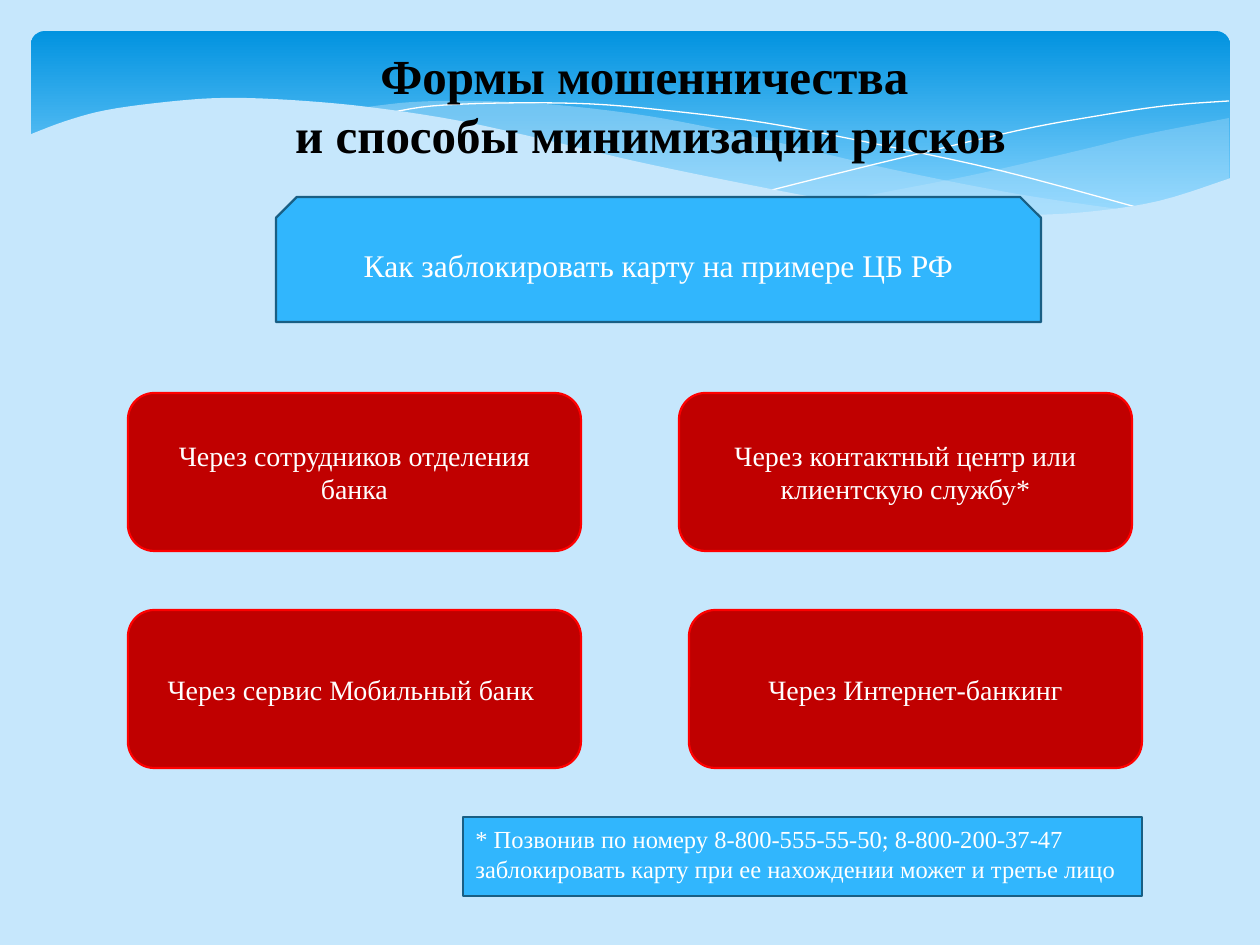
from dataclasses import dataclass

from lxml.etree import SubElement
from pptx import Presentation
from pptx.dml.color import RGBColor
from pptx.enum.shapes import MSO_SHAPE
from pptx.enum.text import MSO_ANCHOR, PP_ALIGN
from pptx.oxml.ns import qn
from pptx.util import Emu, Pt

PX = 914400 / 126  # EMU in one px


@dataclass(frozen=True)
class Theme:
    font: str = "Times New Roman"
    sky: str = "C6E7FC"
    band_top: str = "0293E0"
    band_bottom: str = "83D3FE"
    blue: str = "31B6FD"
    blue_edge: str = "195F84"
    red: str = "C00000"
    red_edge: str = "FF0000"
    white: str = "FFFFFF"
    black: str = "000000"
    title_size: int = 28
    banner_size: int = 18
    card_size: int = 16
    note_size: int = 14
    edge_width: float = 1.25


THEME = Theme()

# Content
TITLE = ["Формы мошенничества ", "и способы минимизации рисков"]
BANNER = "Как заблокировать карту на примере ЦБ РФ"
CARDS = [  # text, left, top
    ("Через сотрудников отделения банка", 128, 393),
    ("Через контактный центр или клиентскую службу*", 679, 393),
    ("Через сервис Мобильный банк ", 128, 610),
    ("Через Интернет-банкинг", 689, 610),
]
NOTE = [
    "* Позвонив по номеру 8-800-555-55-50; 8-800-200-37-47",
    "заблокировать карту при ее нахождении может и третье лицо",
]
CARD_WIDTH, CARD_HEIGHT = 453, 158

# Header waves: knots of smooth edges, from back to front
RIGHT_WAVE = [
    [(1229, 118), (1142, 135), (1085, 149), (982, 173), (891, 191), (833, 202)],
    [(833, 202), (906, 210), (998, 217), (1063, 215), (1130, 208), (1187, 197), (1229, 179)],
]
MIDDLE_WAVE = [
    [(360, 108), (413, 102), (479, 101), (557, 105), (648, 116), (736, 133),
     (793, 146), (890, 169), (1017, 194), (1125, 210)],
    [(1125, 210), (1068, 217), (1017, 218), (943, 215), (856, 206), (757, 189),
     (668, 170), (566, 146), (483, 127), (407, 113), (360, 108)],
]
FALLING_LINE = [
    [(389, 113), (432, 106), (505, 103), (591, 104), (671, 111), (766, 123),
     (876, 144), (1002, 171), (1143, 209)],
]
RISING_LINE = [[(772, 190), (876, 164), (1016, 131), (1091, 117), (1164, 106), (1229, 101)]]
FRONT_WAVE = [
    [(1231, 178), (1159, 201), (1087, 212), (1019, 215), (937, 212), (842, 202),
     (730, 181), (634, 161), (563, 144), (460, 121), (368, 107), (290, 100),
     (223, 98), (166, 102), (107, 110), (66, 121), (29, 135)],
    [(29, 282), (1231, 282)],
]
WAVES = [  # edges, opacity in percent (None for a bare line)
    (RIGHT_WAVE, 29),
    (MIDDLE_WAVE, 40),
    (FALLING_LINE, None),
    (RISING_LINE, None),
    (FRONT_WAVE, 100),
]


def px(value):
    return Emu(round(value * PX))


def color(code):
    return RGBColor.from_string(code)


def smooth_points(knots, steps=5):
    """Points of a Catmull-Rom curve through the knots."""
    if len(knots) == 2:
        return knots
    padded = [knots[0], *knots, knots[-1]]
    points = [knots[0]]
    for before, start, end, after in zip(padded, padded[1:], padded[2:], padded[3:]):
        for step in range(1, steps + 1):
            t = step / steps
            points.append(tuple(
                (2 * b + (c - a) * t + (2 * a - 5 * b + 4 * c - d) * t**2
                 + (3 * b - a - 3 * c + d) * t**3) / 2
                for a, b, c, d in zip(before, start, end, after)))
    return points


def add_wave(page, edges, opacity):
    points = [(px(x), px(y)) for knots in edges for x, y in smooth_points(knots)]
    builder = page.shapes.build_freeform(*points[0], scale=1.0)
    builder.add_line_segments(points[1:], close=opacity is not None)
    wave = builder.convert_to_shape()
    wave.shadow.inherit = False
    if opacity is None:
        wave.fill.background()
        wave.line.color.rgb = color(THEME.white)
        wave.line.width = Pt(0)
        return
    wave.fill.solid()
    wave.fill.fore_color.rgb = color(THEME.sky)
    if opacity < 100:
        sky = next(wave.element.iter(qn("a:srgbClr")))
        SubElement(sky, qn("a:alpha"), val=str(opacity * 1000))
    wave.line.fill.background()


def add_span(para, text, size, ink=THEME.white, bold=False):
    span = para.add_run()
    span.text = text
    span.font.name = THEME.font
    span.font.size = Pt(size)
    span.font.bold = bold
    span.font.color.rgb = color(ink)


def add_box(page, kind, place, fill, edge, lines, size, align=PP_ALIGN.CENTER):
    box = page.shapes.add_shape(kind, *map(px, place))
    box.shadow.inherit = False
    box.fill.solid()
    box.fill.fore_color.rgb = color(fill)
    box.line.color.rgb = color(edge)
    box.line.width = Pt(THEME.edge_width)
    frame = box.text_frame
    frame.word_wrap = True
    frame.vertical_anchor = MSO_ANCHOR.MIDDLE
    for index, line in enumerate(lines):
        para = frame.add_paragraph() if index else frame.paragraphs[0]
        para.alignment = align
        add_span(para, line, size)
    return box


def add_header(page):
    band = page.shapes.add_shape(MSO_SHAPE.ROUNDED_RECTANGLE, *map(px, (31, 31, 1199, 197)))
    band.adjustments[0] = 0.07
    band.shadow.inherit = False
    band.line.fill.background()
    band.fill.gradient()
    band.fill.gradient_angle = 270
    stops = [(0, THEME.band_top), (0.9, THEME.band_bottom)]
    for stop, (position, code) in zip(band.fill.gradient_stops, stops):
        stop.position = position
        stop.color.rgb = color(code)
    for edges, opacity in WAVES:
        add_wave(page, edges, opacity)


def place_title(page):
    title = page.shapes.title
    title.element.getparent().append(title.element)  # in front of the header
    title.left, title.top, title.width, title.height = map(px, (178, 39, 945, 131))
    title.text_frame.word_wrap = True
    title.text_frame.vertical_anchor = MSO_ANCHOR.MIDDLE
    para = title.text_frame.paragraphs[0]
    para.alignment = PP_ALIGN.CENTER
    for index, line in enumerate(TITLE):
        if index:
            para.add_line_break()
        add_span(para, line, THEME.title_size, THEME.black, bold=True)


def main():
    deck = Presentation()
    deck.slide_width, deck.slide_height = px(1260), px(945)
    page = deck.slides.add_slide(deck.slide_layouts[5])
    page.background.fill.solid()
    page.background.fill.fore_color.rgb = color(THEME.sky)

    add_header(page)
    place_title(page)

    # Banner, cards and footnote
    add_box(page, MSO_SHAPE.SNIP_2_SAME_RECTANGLE, (276, 197, 765, 125),
            THEME.blue, THEME.blue_edge, [BANNER], THEME.banner_size)
    for text, left, top in CARDS:
        add_box(page, MSO_SHAPE.ROUNDED_RECTANGLE, (left, top, CARD_WIDTH, CARD_HEIGHT),
                THEME.red, THEME.red_edge, [text], THEME.card_size)
    note = add_box(page, MSO_SHAPE.RECTANGLE, (463, 817, 679, 79),
                   THEME.blue, THEME.blue_edge, NOTE, THEME.note_size, PP_ALIGN.JUSTIFY)
    note.text_frame.margin_bottom = px(12)

    deck.save("out.pptx")


if __name__ == "__main__":
    main()
